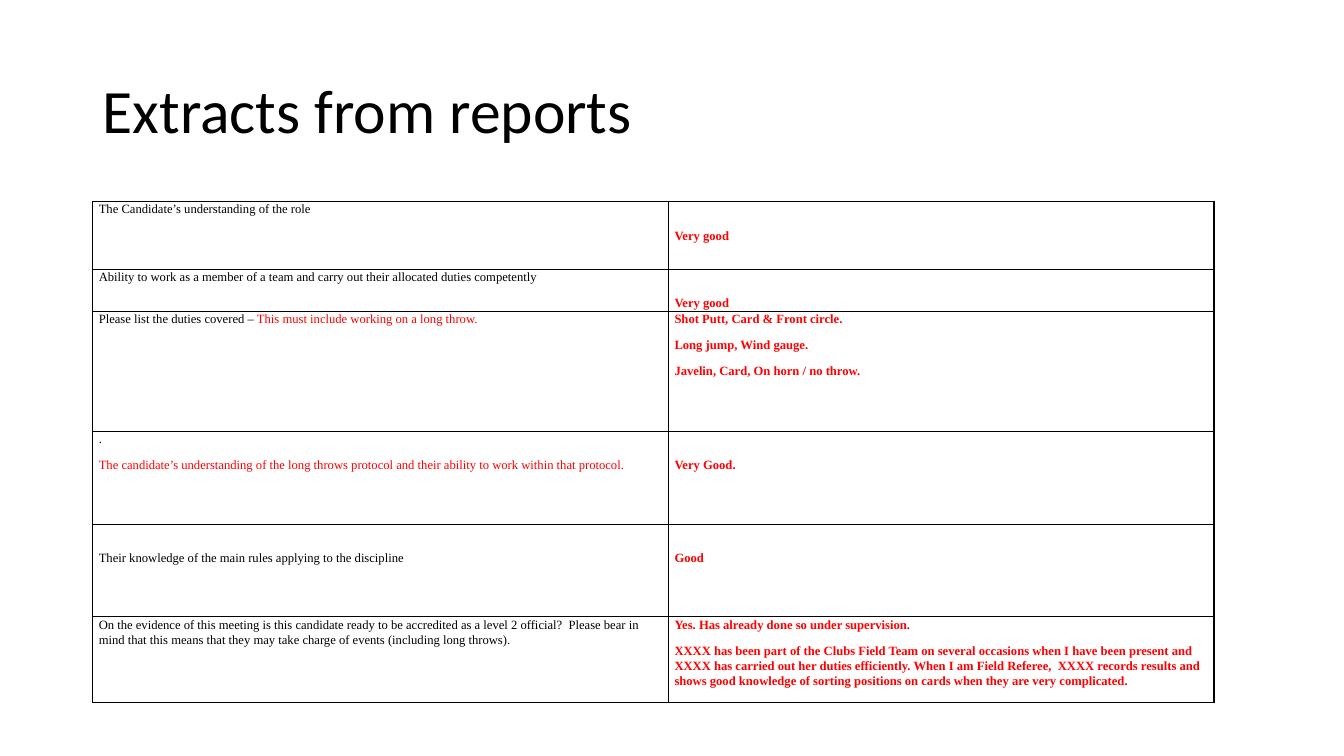
from dataclasses import dataclass

from lxml import etree
from pptx import Presentation
from pptx.dml.color import RGBColor
from pptx.enum.text import MSO_ANCHOR
from pptx.oxml.ns import qn
from pptx.util import Inches, Pt

MIDDLE = MSO_ANCHOR.MIDDLE
COLORS = {"black": "000000", "red": "FF0000"}
TITLE_FONT = "Calibri"
TABLE_FONT = "Times New Roman"
COLUMN_WIDTHS = (5.71, 5.41)
LINE_DROP = 0.26


@dataclass(frozen=True)
class Span:
    text: str
    color: str = "black"
    bold: bool = False


@dataclass(frozen=True)
class Entry:
    paras: tuple[tuple[Span, ...], ...]
    top: float = 0


@dataclass(frozen=True)
class ReportRow:
    height: float
    question: Entry
    answer: Entry


def question(*spans: Span, top: float = 0) -> Entry:
    return Entry((spans,), top)


def answer(*lines: str, top: float = 0) -> Entry:
    return Entry(tuple((Span(line, "red", True),) for line in lines), top)


REPORT = (
    ReportRow(
        0.67,
        question(Span("The Candidate’s understanding of the role")),
        answer("Very good", top=LINE_DROP),
    ),
    ReportRow(
        0.41,
        question(Span("Ability to work as a member of a team and carry out "
                      "their allocated duties competently")),
        answer("Very good", top=LINE_DROP),
    ),
    ReportRow(
        1.19,
        question(Span("Please list the duties covered – "),
                 Span("This must include working on a long throw.", "red")),
        answer("Shot Putt, Card & Front circle.", "Long jump, Wind gauge.",
               "Javelin, Card, On horn / no throw."),
    ),
    ReportRow(
        0.92,
        Entry((
            (Span("."),),
            (Span("The candidate’s understanding of the long throws protocol and "
                  "their ability to work within that protocol.", "red"),),
        )),
        answer("Very Good.", top=LINE_DROP),
    ),
    ReportRow(
        0.92,
        question(Span("Their knowledge of the main rules applying to the discipline"),
                 top=LINE_DROP),
        answer("Good", top=LINE_DROP),
    ),
    ReportRow(
        0.85,
        question(Span("On the evidence of this meeting is this candidate ready to be "
                      "accredited as a level 2 official?  Please bear in mind that this "
                      "means that they may take charge of events (including long throws).")),
        answer("Yes. Has already done so under supervision.",
               "XXXX has been part of the Clubs Field Team on several occasions when I "
               "have been present and XXXX has carried out her duties efficiently. When "
               "I am Field Referee,  XXXX records results and shows good knowledge of "
               "sorting positions on cards when they are very complicated."),
    ),
)


def add_span(para, span: Span, font: str, size: float) -> None:
    run = para.add_run()
    run.text = span.text
    run.font.name = font
    run.font.size = Pt(size)
    run.font.bold = span.bold
    run.font.color.rgb = RGBColor.from_string(COLORS[span.color])


def add_title(page, text: str) -> None:
    box = page.shapes.add_textbox(Inches(0.92), Inches(0.4), Inches(11.5), Inches(1.45))
    frame = box.text_frame
    frame.word_wrap = True
    frame.vertical_anchor = MIDDLE
    para = frame.paragraphs[0]
    para.line_spacing = 0.9
    add_span(para, Span(text), TITLE_FONT, 44)


def add_borders(cell) -> None:
    properties = cell._tc.get_or_add_tcPr()
    for index, side in enumerate(("lnL", "lnR", "lnT", "lnB")):
        line = etree.Element(qn(f"a:{side}"), w=str(Pt(1)))
        fill = etree.SubElement(line, qn("a:solidFill"))
        etree.SubElement(fill, qn("a:srgbClr"), val=COLORS["black"])
        properties.insert(index, line)


def fill_cell(cell, entry: Entry) -> None:
    cell.margin_left = cell.margin_right = Inches(0.06)
    cell.margin_top = Inches(entry.top)
    cell.margin_bottom = 0
    cell.fill.background()
    add_borders(cell)
    frame = cell.text_frame
    for index, spans in enumerate(entry.paras):
        para = frame.add_paragraph() if index else frame.paragraphs[0]
        para.line_spacing = 1.07
        para.space_after = Pt(8)
        for span in spans:
            add_span(para, span, TABLE_FONT, 9)


def add_report(page, rows: tuple[ReportRow, ...]) -> None:
    height = sum(row.height for row in rows)
    table = page.shapes.add_table(
        len(rows), len(COLUMN_WIDTHS), Inches(0.92), Inches(2),
        Inches(sum(COLUMN_WIDTHS)), Inches(height),
    ).table
    table.first_row = False
    table.horz_banding = False
    for column, width in zip(table.columns, COLUMN_WIDTHS):
        column.width = Inches(width)
    for index, row in enumerate(rows):
        table.rows[index].height = Inches(row.height)
        fill_cell(table.cell(index, 0), row.question)
        fill_cell(table.cell(index, 1), row.answer)


def main() -> None:
    deck = Presentation()
    deck.slide_width = Inches(13.33)
    deck.slide_height = Inches(7.5)
    page = deck.slides.add_slide(deck.slide_layouts[6])
    add_title(page, "Extracts from reports")
    add_report(page, REPORT)
    deck.save("out.pptx")


if __name__ == "__main__":
    main()
